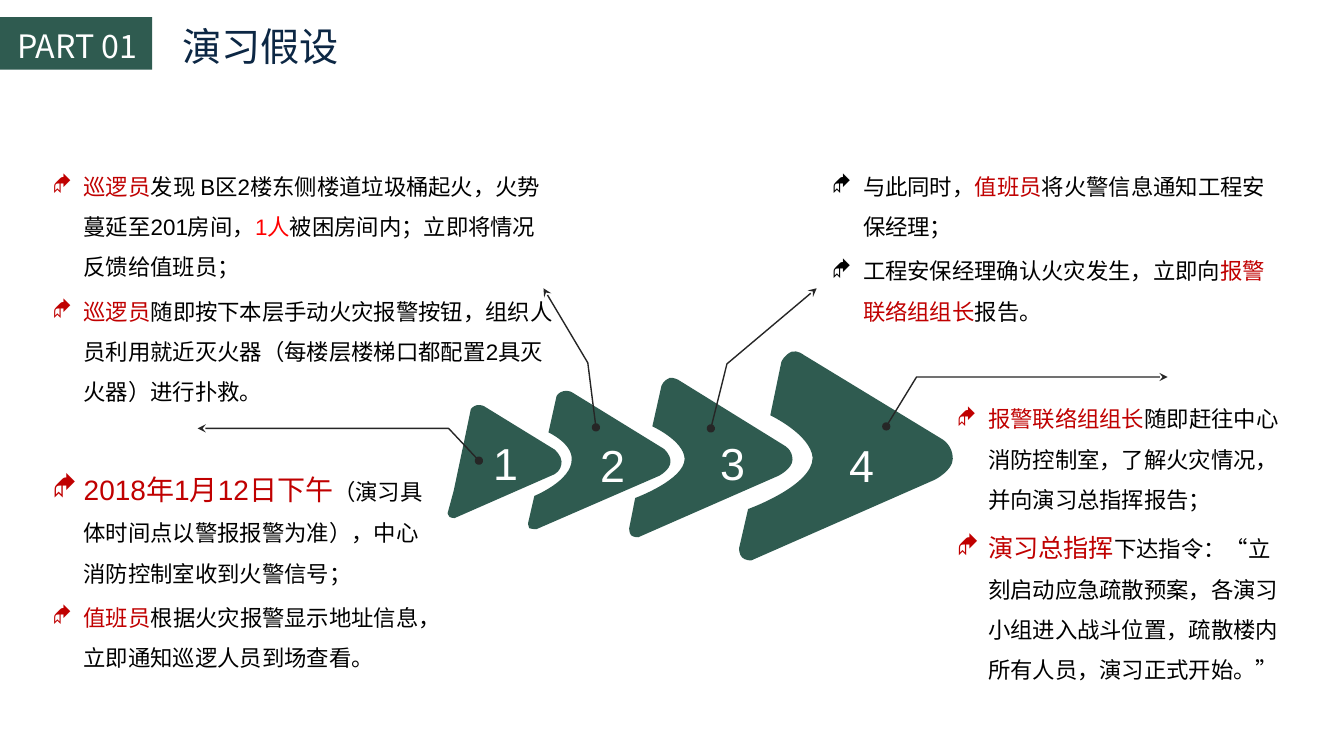
from lxml.etree import SubElement
from pptx import Presentation
from pptx.dml.color import RGBColor
from pptx.enum.shapes import MSO_SHAPE
from pptx.enum.text import PP_ALIGN
from pptx.oxml.ns import qn
from pptx.util import Pt

PX = 9144  # 100 px to the inch
GREEN = RGBColor(0x2F, 0x5B, 0x50)
RED = RGBColor(0xC0, 0x00, 0x00)
BRIGHT_RED = RGBColor(0xFF, 0x00, 0x00)
NAVY = RGBColor(0x0C, 0x27, 0x44)
GREY = RGBColor(0x26, 0x26, 0x26)
BLACK = RGBColor(0, 0, 0)
WHITE = RGBColor(0xFF, 0xFF, 0xFF)
BODY_FONT, TITLE_FONT = "Arial", "Noto Sans CJK SC"

# Arrow outlines, back to front: a pair is a line end, six numbers are a Bézier curve
ARROWS = [
    [(945, 455), (945, 467, 927, 476, 927, 476), (745, 556),
     (745, 556, 739, 556, 736, 553), (733, 550, 733, 544, 733, 544), (742, 505),
     (742, 505, 806, 482, 806, 454), (804, 431, 764, 412, 764, 412), (775, 359),
     (775, 359, 778, 352, 785, 349), (791, 347, 797, 352, 797, 352), (935, 436),
     (935, 436, 945, 442, 945, 455)],
    [(786, 456), (786, 465, 772, 472, 772, 472), (633, 533),
     (633, 533, 628, 533, 626, 531), (624, 529, 624, 524, 624, 524), (630, 494),
     (630, 494, 679, 476, 679, 455), (678, 437, 647, 423, 647, 423), (656, 383),
     (656, 383, 658, 377, 664, 375), (668, 374, 673, 377, 673, 377), (778, 442),
     (778, 442, 786, 446, 786, 456)],
    [(665, 458), (665, 466, 654, 472, 654, 472), (532, 525),
     (532, 525, 528, 525, 525, 524), (523, 522, 524, 518, 524, 518), (530, 492),
     (530, 492, 567, 477, 567, 456), (568, 440, 544, 429, 544, 429), (552, 393),
     (552, 393, 554, 389, 559, 388), (563, 387, 567, 389, 567, 389), (658, 445),
     (658, 445, 665, 450, 665, 458)],
    [(461, 435), (467, 406), (467, 406, 469, 403, 473, 402),
     (476, 401, 480, 403, 480, 403), (550, 446), (550, 446, 557, 452, 557, 458),
     (557, 468, 549, 471, 549, 471), (451, 514), (451, 514, 447, 514, 446, 513),
     (444, 511, 444, 509, 444, 509), (450, 487)],
]

LEADERS = [
    [(879, 423), (909, 374), (1158, 374)],
    [(475, 457), (445, 425), (196, 425)],
    [(705, 425), (721, 361), (810, 286)],
    [(591, 424), (583, 360), (539, 286)],
]

# Notes: box, then paragraphs of (text, colour, size)
NOTES = [
    ((52, 158, 500, 339), [
        [("巡逻员", RED, 16), ("发现 B区2楼东侧楼道垃圾桶起火，火势蔓延至201房间，", BLACK, 16),
         ("1人", BRIGHT_RED, 16), ("被困房间内；立即将情况反馈给值班员；", BLACK, 16)],
        [("巡逻员", RED, 16),
         ("随即按下本层手动火灾报警按钮，组织人员利用就近灭火器（每楼层楼梯口都配置2具灭火器）进行扑救。", BLACK, 16)]]),
    ((825, 158, 444, 165), [
        [("与此同时，", BLACK, 16), ("值班员", RED, 16), ("将火警信息通知工程安保经理；", BLACK, 16)],
        [("工程安保经理确认火灾发生，立即向", BLACK, 16), ("报警联络组组长", RED, 16),
         ("报告。", BLACK, 16)]]),
    ((949, 389, 320, 294), [
        [("报警联络组组长", RED, 16),
         ("随即赶往中心消防控制室，了解火灾情况，并向演习总指挥报告；", BLACK, 16)],
        [("演习总指挥", RED, 18),
         ("下达指令：“立刻启动应急疏散预案，各演习小组进入战斗位置，疏散楼内所有人员，演习正式开始。”", BLACK, 16)]]),
    ((52, 452, 368, 263), [
        [("2018年1月12日下午", RED, 20),
         ("（演习具体时间点以警报报警为准），中心消防控制室收到火警信号；", BLACK, 16)],
        [("值班员", RED, 16), ("根据火灾报警显示地址信息，立即通知巡逻人员到场查看。", BLACK, 16)]]),
]
NUMBERS = [("1", 472, 401), ("2", 578, 403), ("3", 697, 401), ("4", 825, 403)]

prs = Presentation()
prs.slide_width, prs.slide_height = 1333 * PX, 750 * PX
s = prs.slides.add_slide(prs.slide_layouts[6])


def add_text(paragraphs, box, font=BODY_FONT, align=None, spacing=None,
             bullet=False, wrap=True, inset=(10, 5)):
    tf = s.shapes.add_textbox(*(v * PX for v in box)).text_frame
    tf.word_wrap = wrap
    tf.margin_left = tf.margin_right = inset[0] * PX
    tf.margin_top = tf.margin_bottom = inset[1] * PX
    for i, runs in enumerate(paragraphs):
        p = tf.add_paragraph() if i else tf.paragraphs[0]
        p.alignment = align
        if spacing:
            p.line_spacing = spacing
        if i:
            p.space_before = Pt(3)
        if bullet:
            pPr = p._p.get_or_add_pPr()
            pPr.set("marL", str(31 * PX))
            pPr.set("indent", str(-31 * PX))
            SubElement(pPr, qn("a:buFont")).set("typeface", "Wingdings")
            SubElement(pPr, qn("a:buChar")).set("char", "◆")
        for text, color, size in runs:
            r = p.add_run()
            r.text = text
            r.font.size, r.font.name = Pt(size), font
            r.font.color.rgb = color
            rPr = r._r.get_or_add_rPr()
            rPr.set("lang", "zh-CN")
            SubElement(rPr, qn("a:ea")).set("typeface", TITLE_FONT)


def add_outline(outline, close):
    """Draw every point as a line end, then join each curve's three points."""
    points = [(step[i] * PX, step[i + 1] * PX) for step in outline for i in range(0, len(step), 2)]
    builder = s.shapes.build_freeform(*points[0])
    builder.add_line_segments(points[1:], close=False)
    sp = builder.convert_to_shape()
    sp.shadow.inherit = False
    path = sp._element.find(".//" + qn("a:path"))
    ends = iter(path.findall(qn("a:lnTo")))
    for step in outline[1:]:
        end = next(ends)
        if len(step) == 6:
            end.tag = qn("a:cubicBezTo")
            for _ in range(2):
                extra = next(ends)
                end.append(extra[0])
                path.remove(extra)
    if close:
        SubElement(path, qn("a:close"))
    return sp


def fill_green(sp):
    sp.fill.solid()
    sp.fill.fore_color.rgb = GREEN
    sp.line.fill.background()


# Arrows
for outline in ARROWS:
    fill_green(add_outline(outline, True))

# Leader lines
for route in LEADERS:
    sp = add_outline(route, False)
    sp.fill.background()
    sp.line.color.rgb = GREY
    sp.line.width = Pt(1)
    ln = sp.line._get_or_add_ln()
    SubElement(ln, qn("a:headEnd")).set("type", "oval")
    SubElement(ln, qn("a:tailEnd")).set("type", "stealth")

# Notes
for box, paragraphs in NOTES:
    add_text(paragraphs, box, spacing=1.5, bullet=True, inset=(0, 0))

# Heading
add_text([[("演习假设", NAVY, 28)]], (172, 17, 174, 57), font=TITLE_FONT, wrap=False, inset=(9, 5))
tag = s.shapes.add_shape(MSO_SHAPE.RECTANGLE, 0, 17 * PX, 151 * PX, 52 * PX)
tag.shadow.inherit = False
fill_green(tag)
add_text([[("PART 01", WHITE, 23)]], (8, 21, 145, 48), font=TITLE_FONT, wrap=False, inset=(9, 5))

# Arrow numbers
for digit, left, top in NUMBERS:
    add_text([[(digit, WHITE, 32)]], (left, top, 59, 91), align=PP_ALIGN.CENTER, spacing=1.5)

prs.save("out.pptx")
